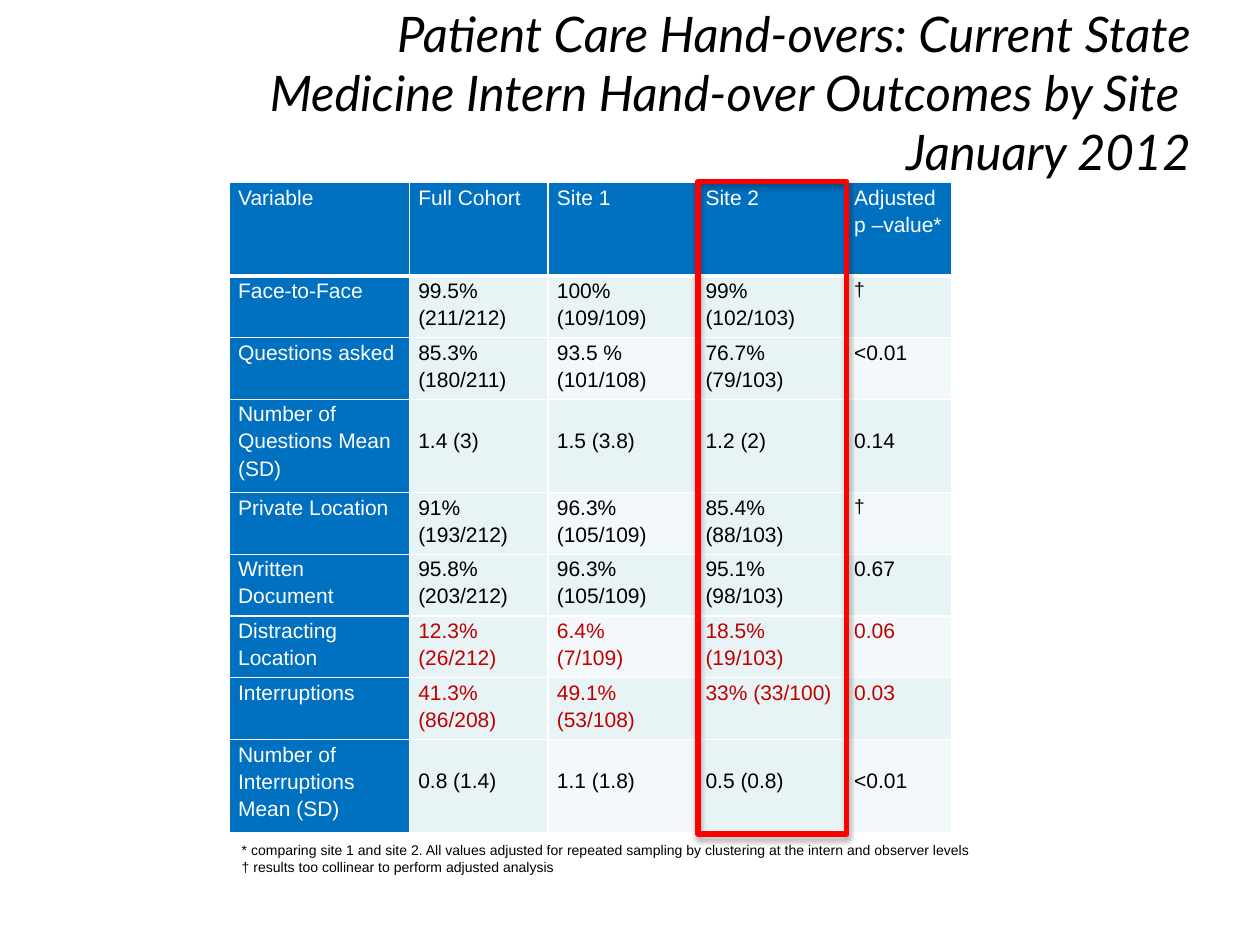
from lxml.etree import SubElement as Sub
from pptx import Presentation
from pptx.dml.color import RGBColor
from pptx.enum.shapes import MSO_SHAPE as Shape
from pptx.enum.text import MSO_ANCHOR as Anchor, MSO_AUTO_SIZE as Fit, PP_ALIGN as Align
from pptx.oxml.ns import qn
from pptx.util import Inches, Pt

BLUE, PALE, LIGHT = "0070C0", "E7F3F4", "F3F9FA"
WHITE, BLACK, DARK, RED = "FFFFFF", "000000", "C00000", "FF0000"
COLS = [1.43, 1.1, 1.18, 1.18, 0.84]
TALL, LOW = 0.74, 0.49
DATA = [
    ["Variable", "Full Cohort", "Site 1", "Site 2", "Adjusted p –value*"],
    ["Face-to-Face", "99.5% (211/212)", "100% (109/109)", "99% (102/103)", "†"],
    ["Questions asked", "85.3% (180/211)", "93.5 % (101/108)", "76.7% (79/103)", "<0.01"],
    ["Number of Questions Mean (SD)", "1.4 (3)", "1.5 (3.8)", "1.2 (2)", "0.14"],
    ["Private Location", "91% (193/212)", "96.3% (105/109)", "85.4% (88/103)", "†"],
    ["Written Document", "95.8% (203/212)", "96.3% (105/109)", "95.1% (98/103)", "0.67"],
    ["Distracting Location", "12.3% (26/212)", "6.4%\n(7/109)", "18.5% (19/103)", "0.06"],
    ["Interruptions", "41.3% (86/208)", "49.1% (53/108)", "33% (33/100)", "0.03"],
    ["Number of Interruptions Mean (SD)", "0.8 (1.4)", "1.1 (1.8)", "0.5 (0.8)", "<0.01"],
]
MEANS, ALERTS = (3, 8), (6, 7)
TITLE = ("Patient Care Hand-overs: Current State\v"
         "Medicine Intern Hand-over Outcomes by Site \vJanuary 2012")
NOTES = ("* comparing site 1 and site 2. All values adjusted for repeated sampling "
         "by clustering at the intern and observer levels\n"
         "† results too collinear to perform adjusted analysis")


def tint(code):
    return RGBColor.from_string(code)


def put(item, **vals):
    for key, val in vals.items():
        setattr(item, key, val)


def place(item, left, top, width, height):
    put(item, left=Inches(left), top=Inches(top),
        width=Inches(width), height=Inches(height))


def write(frame, text, color, para=None, **font):
    frame.text = text
    for par in frame.paragraphs:
        put(par, **(para or {}))
        for run in par.runs:
            put(run.font, **font)
            run.font.color.rgb = tint(color)


def add_title(slide):
    box = slide.shapes.title
    place(box, 0.77, 0.25, 8.78, 1.43)
    put(box.text_frame, word_wrap=True, auto_size=Fit.NONE,
        vertical_anchor=Anchor.MIDDLE, margin_bottom=Inches(0.52))
    write(box.text_frame, TITLE, BLACK, {"alignment": Align.RIGHT},
          name="Lato", size=Pt(28), italic=True)


def edge(cell, row):
    wide = {("lnB", 0), ("lnT", 1)}
    props = cell._tc.get_or_add_tcPr()
    for side in ("lnL", "lnR", "lnT", "lnB"):
        width = Pt(3 if (side, row) in wide else 1)
        line = Sub(props, qn("a:" + side), w=str(width))
        Sub(Sub(line, qn("a:solidFill")), qn("a:srgbClr"), val=WHITE)


def fill_cell(cell, row, col, text):
    head = row == 0 or col == 0
    drop = 0.21 if row in MEANS and col else 0
    put(cell, margin_left=Inches(0.07), margin_right=Inches(0.07),
        margin_top=Inches(drop), margin_bottom=0)
    edge(cell, row)
    band = LIGHT if row % 2 == 0 and col in (2, 4) else PALE
    cell.fill.solid()
    cell.fill.fore_color.rgb = tint(BLUE if head else band)
    color = WHITE if head else DARK if row in ALERTS else BLACK
    write(cell.text_frame, text, color, {"line_spacing": 1.15},
          name="Arial", size=Pt(11 if text == "†" else 12), bold=False)


def add_grid(slide):
    frame = slide.shapes.add_table(len(DATA), len(COLS), Inches(1.82),
                                   Inches(1.45), Inches(5.73), Inches(5.18))
    grid = frame.table
    for col, width in zip(grid.columns, COLS):
        col.width = Inches(width)
    for row, line in enumerate(DATA):
        grid.rows[row].height = Inches(TALL if row in (0, *MEANS) else LOW)
        for col, text in enumerate(line):
            fill_cell(grid.cell(row, col), row, col, text)


def add_notes(slide):
    box = slide.shapes.add_textbox(Inches(1.82), Inches(6.63), Inches(6.68), Inches(0.37))
    put(box.text_frame, word_wrap=True, auto_size=Fit.SHAPE_TO_FIT_TEXT,
        vertical_anchor=Anchor.MIDDLE)
    write(box.text_frame, NOTES, BLACK, name="Arial", size=Pt(8))


def add_frame(slide):
    box = slide.shapes.add_shape(Shape.RECTANGLE, Inches(5.54), Inches(1.44),
                                 Inches(1.18), Inches(5.18))
    box.fill.background()
    box.line.color.rgb = tint(RED)
    box.line.width = Pt(3)
    box.shadow.inherit = False
    props = box._element.spPr
    Sub(props.find(qn("a:ln")), qn("a:round"))
    shade = Sub(props.find(qn("a:effectLst")), qn("a:outerShdw"),
                blurRad=str(Pt(3.1)), dist=str(Pt(1.8)), dir="5400000", rotWithShape="0")
    Sub(Sub(shade, qn("a:srgbClr"), val=BLACK), qn("a:alpha"), val="35000")


def main():
    deck = Presentation()
    put(deck, slide_width=Inches(10), slide_height=Inches(7.5))
    slide = deck.slides.add_slide(deck.slide_layouts[5])
    add_title(slide)
    add_grid(slide)
    add_notes(slide)
    add_frame(slide)
    deck.save("out.pptx")


if __name__ == "__main__":
    main()
